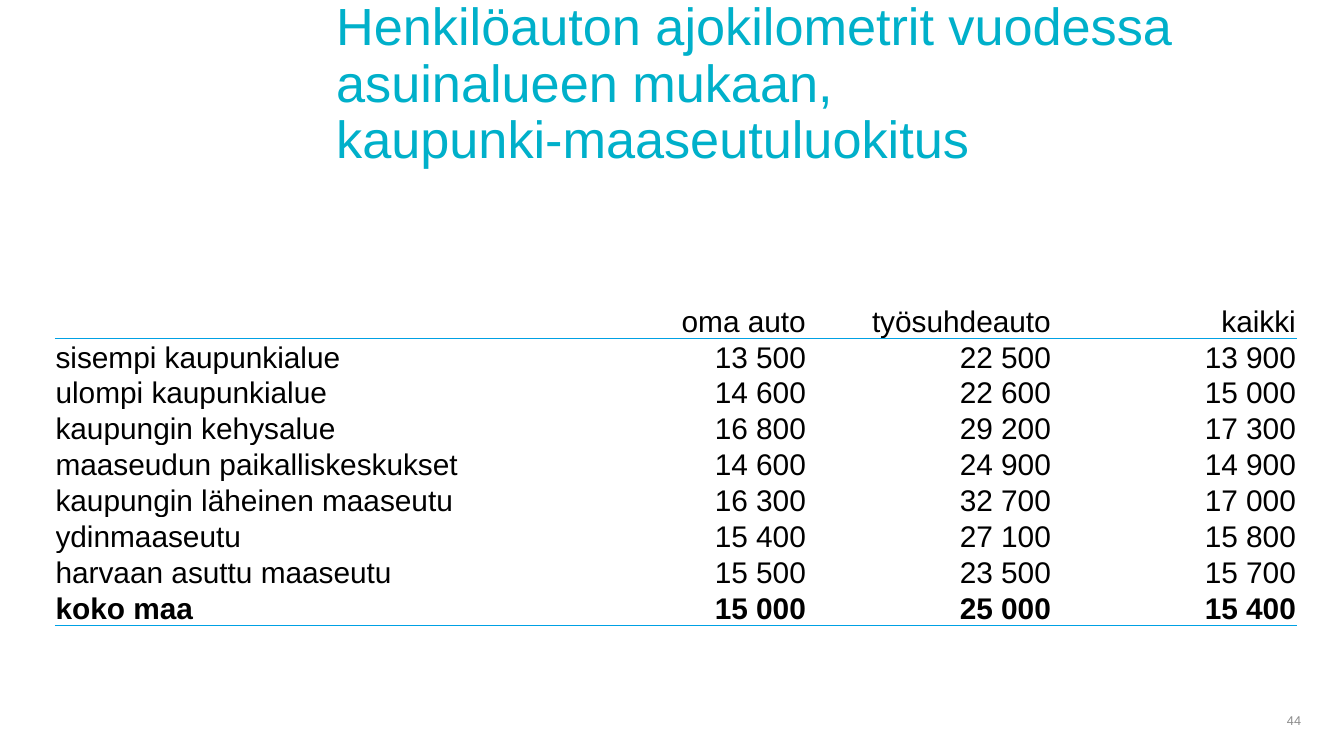
from dataclasses import dataclass

from lxml.etree import SubElement
from pptx import Presentation
from pptx.dml.color import RGBColor
from pptx.enum.text import MSO_ANCHOR, MSO_AUTO_SIZE, PP_ALIGN
from pptx.oxml.ns import qn
from pptx.slide import Slide
from pptx.table import _Cell
from pptx.text.text import _Paragraph
from pptx.util import Cm, Pt


@dataclass(frozen=True)
class Theme:
    font: str = "Arial"
    title: str = "00B0CA"
    text: str = "000000"
    page: str = "8C8C8C"
    rule: str = "00A1E4"
    back: str = "FFFFFF"
    title_size: float = 28
    text_size: float = 16
    page_size: float = 6.8
    rule_width: float = 0.5


@dataclass(frozen=True)
class Row:
    label: str
    values: tuple[str, str, str]
    bold: bool = False


THEME = Theme()
ROWS = (
    Row("", ("oma auto", "työsuhdeauto", "kaikki")),
    Row("sisempi kaupunkialue", ("13 500", "22 500", "13 900")),
    Row("ulompi kaupunkialue", ("14 600", "22 600", "15 000")),
    Row("kaupungin kehysalue", ("16 800", "29 200", "17 300")),
    Row("maaseudun paikalliskeskukset", ("14 600", "24 900", "14 900")),
    Row("kaupungin läheinen maaseutu", ("16 300", "32 700", "17 000")),
    Row("ydinmaaseutu", ("15 400", "27 100", "15 800")),
    Row("harvaan asuttu maaseutu", ("15 500", "23 500", "15 700")),
    Row("koko maa", ("15 000", "25 000", "15 400"), bold=True),
)
WIDTHS = (Cm(9.55), Cm(4.63), Cm(4.63), Cm(4.63))
HEAD, LINE = Cm(1.14), Cm(0.58)


def style(para: _Paragraph, size: float, color: str, align: PP_ALIGN,
          bold: bool = False) -> None:
    para.alignment = align
    font = para.font
    font.name, font.size, font.bold = THEME.font, Pt(size), bold
    font.color.rgb = RGBColor.from_string(color)


def add_rule(cell: _Cell, side: str) -> None:
    """Draw a thin border on one side: "T" for top, "B" for bottom."""
    props = cell._tc.get_or_add_tcPr()
    line = SubElement(props, qn(f"a:ln{side}"), w=str(Pt(THEME.rule_width)))
    fill = SubElement(line, qn("a:solidFill"))
    SubElement(fill, qn("a:srgbClr"), val=THEME.rule)


def add_title(slide: Slide, text: str) -> None:
    title = slide.shapes.title
    title.left, title.top = Cm(6.1), Cm(0.86)
    title.width, title.height = Cm(18.39), Cm(2.57)
    frame = title.text_frame
    frame.text = text
    frame.word_wrap = True
    frame.auto_size = MSO_AUTO_SIZE.NONE
    frame.vertical_anchor = MSO_ANCHOR.MIDDLE
    frame.margin_bottom = Cm(1.2)
    para = frame.paragraphs[0]
    para.line_spacing = 0.9
    style(para, THEME.title_size, THEME.title, PP_ALIGN.LEFT)


def fill_cell(cell: _Cell, text: str, align: PP_ALIGN, bold: bool) -> None:
    cell.text = text
    cell.vertical_anchor = MSO_ANCHOR.BOTTOM
    cell.margin_left = cell.margin_right = 0
    cell.margin_top = cell.margin_bottom = 0
    cell.fill.solid()
    cell.fill.fore_color.rgb = RGBColor.from_string(THEME.back)
    style(cell.text_frame.paragraphs[0], THEME.text_size, THEME.text, align, bold)


def add_grid(slide: Slide) -> None:
    last = len(ROWS) - 1
    rules = {0: "B", 1: "T", last: "B"}
    grid = slide.shapes.add_table(
        len(ROWS), len(WIDTHS), Cm(1.05), Cm(5.26),
        sum(WIDTHS), HEAD + last * LINE).table
    grid.first_row = grid.horz_banding = False
    for col, width in zip(grid.columns, WIDTHS):
        col.width = width
    for i, row in enumerate(ROWS):
        grid.rows[i].height = LINE if i else HEAD
        for j, text in enumerate((row.label, *row.values)):
            cell = grid.cell(i, j)
            if i in rules:
                add_rule(cell, rules[i])
            align = PP_ALIGN.RIGHT if j else PP_ALIGN.LEFT
            fill_cell(cell, text, align, row.bold)


def add_page(slide: Slide, number: str) -> None:
    box = slide.shapes.add_textbox(Cm(23.8), Cm(13.23), Cm(1.04), Cm(0.76))
    frame = box.text_frame
    frame.text = number
    frame.word_wrap = True
    frame.vertical_anchor = MSO_ANCHOR.MIDDLE
    style(frame.paragraphs[0], THEME.page_size, THEME.page, PP_ALIGN.RIGHT)


def main() -> None:
    deck = Presentation()
    deck.slide_width, deck.slide_height = Cm(25.4), Cm(14.29)
    slide = deck.slides.add_slide(deck.slide_layouts[5])
    add_title(slide, "Henkilöauton ajokilometrit vuodessa asuinalueen mukaan,"
                     "\vkaupunki-maaseutuluokitus")
    add_page(slide, "44")
    add_grid(slide)
    deck.save("out.pptx")


if __name__ == "__main__":
    main()
